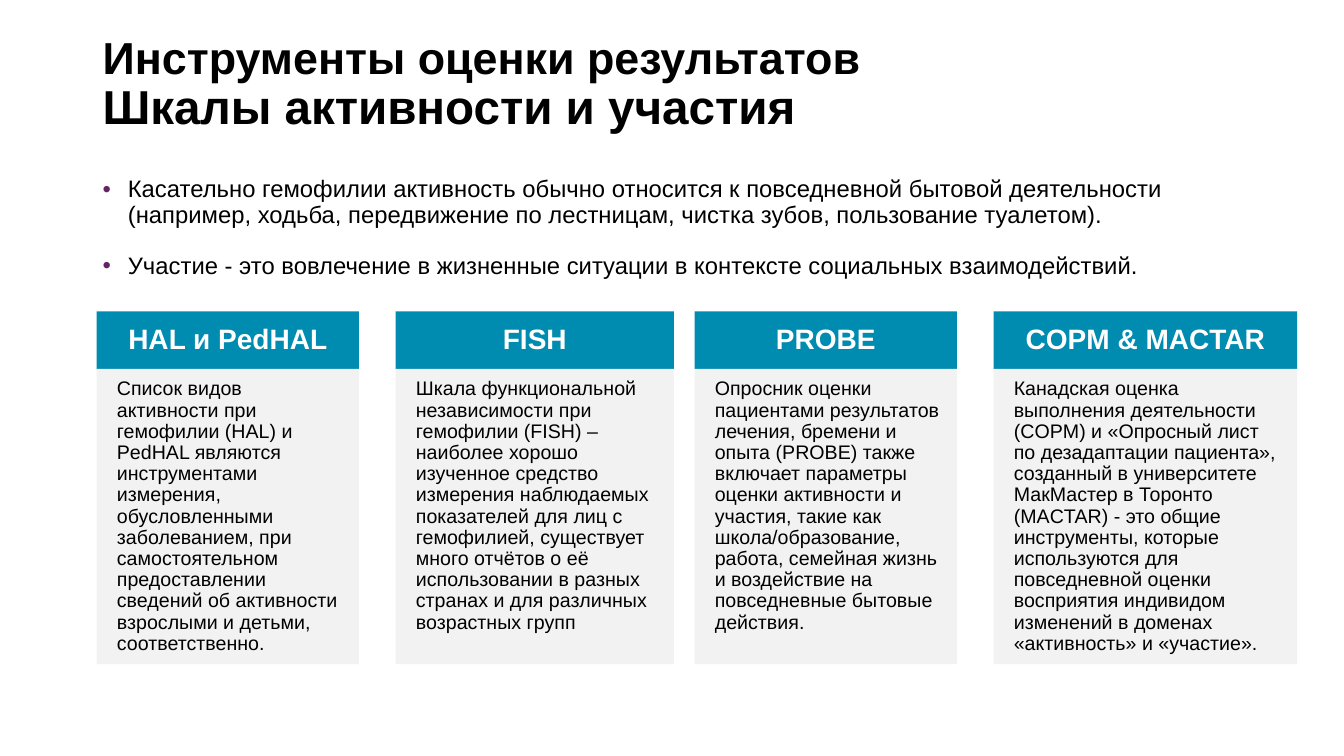
from dataclasses import dataclass

from lxml.etree import SubElement
from pptx import Presentation
from pptx.dml.color import RGBColor
from pptx.enum.shapes import MSO_SHAPE as Shape
from pptx.enum.text import MSO_ANCHOR as Anchor, PP_ALIGN as Align
from pptx.oxml.ns import qn
from pptx.util import Inches, Pt

BLACK = RGBColor(0x00, 0x00, 0x00)
WHITE = RGBColor(0xFF, 0xFF, 0xFF)
TEAL = RGBColor(0x00, 0x8B, 0xB0)
PALE_GRAY = RGBColor(0xF2, 0xF2, 0xF2)
PURPLE = RGBColor(0x64, 0x25, 0x66)

FONT = "Arial"
LINE_SPACING = 0.9
TEXT_LEFT, TEXT_WIDTH = 0.92, 11.5
GRID_LEFT, COLUMN_PITCH = 0.96, 2.965
HEADER_TOP, HEADER_HEIGHT, BODY_HEIGHT = 3.09, 0.57, 2.93
BULLET_INDENT = Inches(0.25)


@dataclass(frozen=True)
class Scale:
    name: str
    description: str
    width: float = 2.6
    header_inset: float = 0.19


@dataclass(frozen=True)
class Style:
    size: int
    color: RGBColor = BLACK
    bold: bool = False
    align: Align = Align.LEFT


TITLE_LINES = [
    ("Инструменты оценки результатов", Style(32, bold=True)),
    ("Шкалы активности и участия", Style(34, bold=True)),
]
BULLETS = [
    "Касательно гемофилии активность обычно относится к повседневной бытовой деятельности "
    "(например, ходьба, передвижение по лестницам, чистка зубов, пользование туалетом).",
    "Участие - это вовлечение в жизненные ситуации в контексте социальных взаимодействий.",
]
SCALES = [
    Scale(
        "HAL и PedHAL",
        "Список видов активности при гемофилии (HAL) и PedHAL являются инструментами измерения, "
        "обусловленными заболеванием, при самостоятельном предоставлении сведений об активности "
        "взрослыми и детьми, соответственно.",
    ),
    Scale(
        "FISH",
        "Шкала функциональной независимости при гемофилии (FISH) – наиболее хорошо изученное "
        "средство измерения наблюдаемых показателей для лиц с гемофилией, существует много "
        "отчётов о её использовании в разных странах и для различных возрастных групп",
        width=2.76,
    ),
    Scale(
        "PROBE",
        "Опросник оценки пациентами результатов лечения, бремени и опыта (PROBE) также включает "
        "параметры оценки активности и участия, такие как школа/образование, работа, семейная "
        "жизнь и воздействие на повседневные бытовые действия.",
    ),
    Scale(
        "COPM & MACTAR",
        "Канадская оценка выполнения деятельности (COPM) и «Опросный лист по дезадаптации "
        "пациента», созданный в университете МакМастер в Торонто (MACTAR) - это общие "
        "инструменты, которые используются для повседневной оценки восприятия индивидом "
        "изменений в доменах «активность» и «участие».",
        width=3.01,
        header_inset=0,
    ),
]
BULLET_STYLE = Style(17)
HEADER_STYLE = Style(20, WHITE, True, Align.CENTER)
BODY_STYLE = Style(14)


def apply_format(target, values: dict) -> None:
    for name, value in values.items():
        setattr(target, name, value)


def add_span(para, text: str, style: Style) -> None:
    span = para.add_run()
    span.text = text
    apply_format(span.font, {"name": FONT, "size": Pt(style.size), "bold": style.bold})
    span.font.color.rgb = style.color
    apply_format(para, {"alignment": style.align, "line_spacing": LINE_SPACING})


def add_bullet(para) -> None:
    properties = para._p.get_or_add_pPr()
    properties.set("marL", str(BULLET_INDENT))
    properties.set("indent", str(-BULLET_INDENT))
    color = SubElement(properties, qn("a:buClr"))
    SubElement(color, qn("a:srgbClr")).set("val", str(PURPLE))
    SubElement(properties, qn("a:buFont")).set("typeface", FONT)
    SubElement(properties, qn("a:buChar")).set("char", "•")


def add_text_frame(page, top: float, height: float, anchor: Anchor):
    box = page.shapes.add_textbox(*map(Inches, (TEXT_LEFT, top, TEXT_WIDTH, height)))
    apply_format(box.text_frame, {"word_wrap": True, "vertical_anchor": anchor})
    return box.text_frame


def add_title(page) -> None:
    para = add_text_frame(page, 0.25, 1.19, Anchor.MIDDLE).paragraphs[0]
    for index, (text, style) in enumerate(TITLE_LINES):
        if index:
            para.add_line_break()
        add_span(para, text, style)


def add_bullets(page) -> None:
    frame = add_text_frame(page, 1.71, 1.42, Anchor.TOP)
    for index, text in enumerate(BULLETS):
        para = frame.add_paragraph() if index else frame.paragraphs[0]
        add_bullet(para)
        add_span(para, text, BULLET_STYLE)
        if index:
            para.space_before = Pt(18)


def add_panel(page, bounds: tuple, fill: RGBColor, text: str, style: Style,
              anchor: Anchor, insets: tuple) -> None:
    box = page.shapes.add_shape(Shape.RECTANGLE, *map(Inches, bounds))
    box.shadow.inherit = False
    box.fill.solid()
    box.fill.fore_color.rgb = fill
    box.line.fill.background()
    sides = ("margin_left", "margin_top", "margin_right", "margin_bottom")
    apply_format(box.text_frame, {"word_wrap": True, "vertical_anchor": anchor})
    apply_format(box.text_frame, dict(zip(sides, map(Inches, insets))))
    add_span(box.text_frame.paragraphs[0], text, style)


def add_scale(page, column: int, scale: Scale) -> None:
    left = GRID_LEFT + column * COLUMN_PITCH
    add_panel(page, (left, HEADER_TOP, scale.width, HEADER_HEIGHT), TEAL, scale.name,
              HEADER_STYLE, Anchor.MIDDLE, (scale.header_inset, 0.11) * 2)
    add_panel(page, (left, HEADER_TOP + HEADER_HEIGHT, scale.width, BODY_HEIGHT), PALE_GRAY,
              scale.description, BODY_STYLE, Anchor.TOP, (0.2, 0.1, 0.14, 0.16))


def main() -> None:
    deck = Presentation()
    apply_format(deck, {"slide_width": Inches(13.33), "slide_height": Inches(7.5)})
    page = deck.slides.add_slide(deck.slide_layouts[6])
    add_title(page)
    add_bullets(page)
    for column, scale in enumerate(SCALES):
        add_scale(page, column, scale)
    deck.save("out.pptx")


if __name__ == "__main__":
    main()
